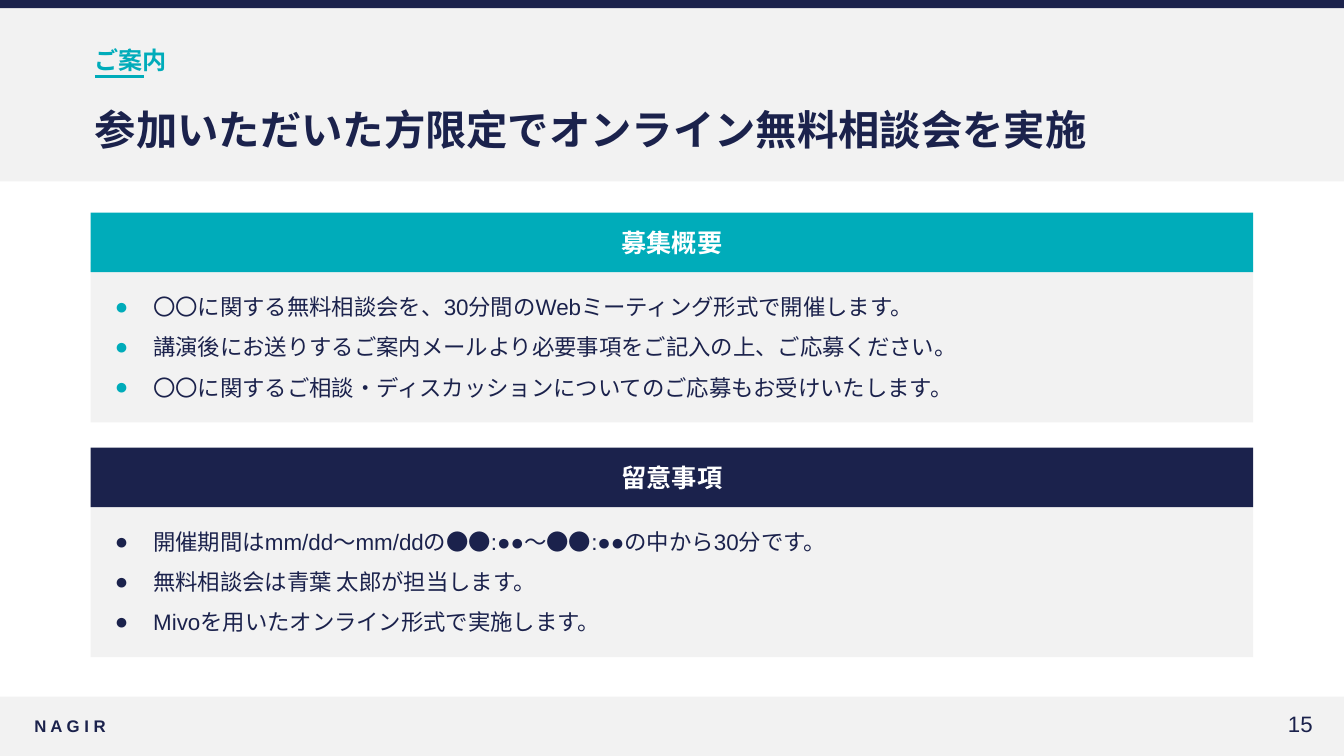
from lxml.etree import SubElement
from pptx import Presentation
from pptx.dml.color import RGBColor
from pptx.enum.shapes import MSO_CONNECTOR, MSO_SHAPE
from pptx.enum.text import MSO_ANCHOR, PP_ALIGN
from pptx.oxml.ns import qn
from pptx.util import Inches, Pt

NAVY = RGBColor(0x1B, 0x22, 0x4C)
TEAL = RGBColor(0x00, 0xAC, 0xBA)
GRAY = RGBColor(0xF2, 0xF2, 0xF2)
WHITE = RGBColor(0xFF, 0xFF, 0xFF)
LATIN = "Arial"
JAPANESE = "Noto Sans CJK JP"

SLIDE_W, SLIDE_H = 13.33, 7.5
MARGIN, CONTENT_W = 0.9, 11.53
PANEL_H, HEADING_H, BODY_TOP = 2.08, 0.59, 0.49

PANELS = [
    ("募集概要", TEAL, [
        "〇〇に関する無料相談会を、30分間のWebミーティング形式で開催します。",
        "講演後にお送りするご案内メールより必要事項をご記入の上、ご応募ください。",
        "〇〇に関するご相談・ディスカッションについてのご応募もお受けいたします。",
    ]),
    ("留意事項", NAVY, [
        "開催期間はmm/dd～mm/ddの●●:●●～●●:●●の中から30分です。",
        "無料相談会は青葉 太郎が担当します。",
        "Mivoを用いたオンライン形式で実施します。",
    ]),
]


def add_rect(slide, x, y, w, h, color):
    sp = slide.shapes.add_shape(
        MSO_SHAPE.RECTANGLE, Inches(x), Inches(y), Inches(w), Inches(h))
    sp.shadow.inherit = False
    sp.fill.solid()
    sp.fill.fore_color.rgb = color
    sp.line.fill.background()
    return sp


def set_insets(tf, left, top, right, bottom):
    tf.margin_left, tf.margin_top = Inches(left), Inches(top)
    tf.margin_right, tf.margin_bottom = Inches(right), Inches(bottom)


def write(p, text, size, color, font=JAPANESE, bold=False, align=PP_ALIGN.LEFT):
    p.text = text
    p.alignment = align
    for r in p.runs:
        r.font.size = Pt(size)
        r.font.bold = bold
        r.font.name = font
        r.font.color.rgb = color
        ea = SubElement(r.font._element, qn("a:ea"))
        ea.set("typeface", JAPANESE)


def add_label(slide, x, y, w, h, text, size, color, wrap=True,
              anchor=MSO_ANCHOR.MIDDLE, **style):
    sp = slide.shapes.add_textbox(Inches(x), Inches(y), Inches(w), Inches(h))
    tf = sp.text_frame
    tf.word_wrap = wrap
    tf.vertical_anchor = anchor
    set_insets(tf, 0.04, 0.04, 0.04, 0.04)
    write(tf.paragraphs[0], text, size, color, **style)
    return sp


def set_bullet(p, color):
    pPr = p._p.get_or_add_pPr()
    pPr.set("marL", str(Inches(0.38)))
    pPr.set("indent", str(-Inches(0.38)))
    bu_color = SubElement(pPr, qn("a:buClr"))
    SubElement(bu_color, qn("a:srgbClr")).set("val", str(color))
    SubElement(pPr, qn("a:buFont")).set("typeface", LATIN)
    SubElement(pPr, qn("a:buChar")).set("char", "●")


def add_header(slide, x, y, w, h):
    add_rect(slide, x, y, w, h, GRAY)
    add_rect(slide, x, y, w, 0.08, NAVY)
    left = x + MARGIN
    add_label(slide, left, y + 0.41, CONTENT_W, 0.28, "ご案内", 17.2, TEAL,
              anchor=MSO_ANCHOR.TOP, bold=True)
    line = slide.shapes.add_connector(
        MSO_CONNECTOR.STRAIGHT, Inches(left + 0.04), Inches(y + 0.76),
        Inches(left + 0.53), Inches(y + 0.76))
    line.line.color.rgb = TEAL
    line.line.width = Pt(2.5)
    SubElement(line._element.spPr, qn("a:effectLst"))
    add_label(slide, left, y + 0.98, CONTENT_W, 0.59,
              "参加いただいた方限定でオンライン無料相談会を実施", 29.5, NAVY, bold=True)


def add_panel(slide, x, y, w, h, heading, color, items):
    body = add_rect(slide, x, y + BODY_TOP, w, h - BODY_TOP, GRAY)
    tf = body.text_frame
    tf.word_wrap = True
    tf.vertical_anchor = MSO_ANCHOR.MIDDLE
    set_insets(tf, 0.24, 0.15, 0.24, 0.19)
    for i, item in enumerate(items):
        p = tf.add_paragraph() if i else tf.paragraphs[0]
        write(p, item, 16, NAVY, font=LATIN)
        p.line_spacing = 1.5
        set_bullet(p, color)

    bar = add_rect(slide, x, y, w, HEADING_H, color)
    bar.text_frame.vertical_anchor = MSO_ANCHOR.MIDDLE
    write(bar.text_frame.paragraphs[0], heading, 18, WHITE, bold=True,
          align=PP_ALIGN.CENTER)


def add_footer(slide, x, y, w, h):
    add_rect(slide, x, y, w, h, GRAY)
    add_label(slide, x + 0.3, y + 0.14, 1.07, 0.31, "N A G I R", 12, NAVY,
              wrap=False, font=LATIN, bold=True)
    number = add_label(slide, x + w - 1.58, y + 0.14, 1.31, 0.31, "15", 15.9,
                       NAVY, wrap=False, font=LATIN, align=PP_ALIGN.RIGHT)
    number.text_frame.paragraphs[0].line_spacing = 0.8


def main():
    prs = Presentation()
    prs.slide_width, prs.slide_height = Inches(SLIDE_W), Inches(SLIDE_H)
    slide = prs.slides.add_slide(prs.slide_layouts[6])
    add_header(slide, 0, 0, SLIDE_W, 1.8)
    for i, (heading, color, items) in enumerate(PANELS):
        add_panel(slide, MARGIN, 2.11 + i * 2.33, CONTENT_W, PANEL_H,
                  heading, color, items)
    add_footer(slide, 0, 6.91, SLIDE_W, 0.59)
    prs.save("out.pptx")


if __name__ == "__main__":
    main()
